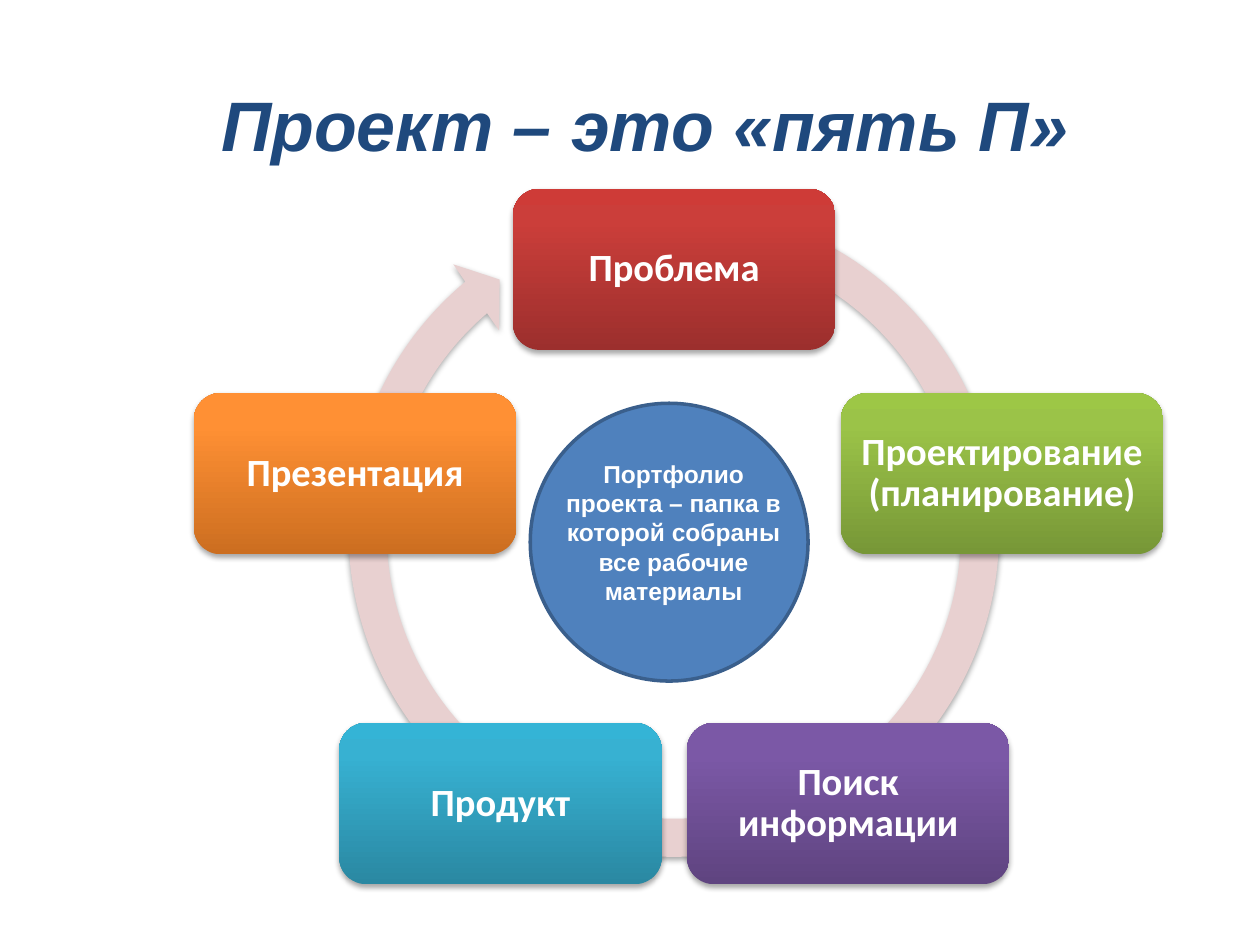
from lxml.etree import SubElement
from pptx import Presentation
from pptx.dml.color import RGBColor
from pptx.enum.shapes import MSO_SHAPE
from pptx.enum.text import MSO_ANCHOR, MSO_AUTO_SIZE, PP_ALIGN
from pptx.oxml import parse_xml
from pptx.oxml.ns import nsdecls, qn
from pptx.util import Cm, Pt

TITLE = "Проект – это «пять П»"
PORTFOLIO = "Портфолио проекта – папка в которой собраны все рабочие материалы"

# Label, centre of the box in cm, gradient colours from bottom to top
STAGES = [
    ("Проблема", (13.59, 5.43), ("9C2F2D", "CB3E3A", "CE3B37")),
    ("Проектирование (планирование)", (20.2, 9.55), ("779737", "9BC348", "9DC746")),
    ("Поиск информации", (17.1, 16.2), ("5F4480", "7B58A6", "7C57A8")),
    ("Продукт", (10.09, 16.2), ("2A88A2", "37B1D2", "34B4D6")),
    ("Презентация", (7.16, 9.55), ("CC6E20", "FF9034", "FF9136")),
]
STAGE_WIDTH, STAGE_HEIGHT = 6.5, 3.25

THEME = {
    "title": "1F497D", "ring": "E8D0D0", "white": "FFFFFF",
    "circle": "4F81BD", "circle_line": "3A5F8C", "shadow": "000000",
    "heading_font": "Arial", "stage_font": "Calibri",
    "title_size": 40, "stage_size": 22, "portfolio_size": 14,
}
GRADIENT_STOPS = (0, 80, 100)
RING_ADJUSTMENTS = (0.055, 3.307, 137.893, 173.778, 0.058)


def color(name):
    return RGBColor.from_string(THEME[name])


def write_text(shape, text, *, font, size, fill, italic=False, line_spacing=None):
    frame = shape.text_frame
    frame.word_wrap = True
    paragraph = frame.paragraphs[0]
    paragraph.alignment = PP_ALIGN.CENTER
    if line_spacing:
        paragraph.line_spacing = line_spacing
    run = paragraph.add_run()
    run.text = text
    run.font.name = THEME[font]
    run.font.size = Pt(THEME[size])
    run.font.color.rgb = color(fill)
    run.font.bold = True
    run.font.italic = italic
    return frame


def add_text_box(slide, box, text, **text_format):
    shape = slide.shapes.add_textbox(*map(Cm, box))
    frame = write_text(shape, text, **text_format)
    frame.auto_size = MSO_AUTO_SIZE.SHAPE_TO_FIT_TEXT


def add_soft_shadow(shape):
    shape.shadow.inherit = False
    effects = shape._element.spPr.find(qn("a:effectLst"))
    shadow = SubElement(effects, qn("a:outerShdw"), blurRad=str(Pt(3.1)),
                        dist=str(Pt(1.8)), dir="5400000", rotWithShape="0")
    shade = SubElement(shadow, qn("a:srgbClr"), val=THEME["shadow"])
    SubElement(shade, qn("a:alpha"), val="35000")


def set_gradient(shape, colors):
    """Fill the shape with a three-stop gradient running upwards."""
    stops = "".join(
        f'<a:gs pos="{position * 1000}"><a:srgbClr val="{value}"/></a:gs>'
        for position, value in zip(GRADIENT_STOPS, colors))
    gradient = parse_xml(
        f'<a:gradFill {nsdecls("a")} rotWithShape="1"><a:gsLst>{stops}</a:gsLst>'
        '<a:lin ang="16200000" scaled="0"/></a:gradFill>')
    shape._element.spPr.find(qn("a:prstGeom")).addnext(gradient)


def add_ring(group):
    ring = group.shapes.add_shape(MSO_SHAPE.CIRCULAR_ARROW, Cm(6.6), Cm(3.73), Cm(13.97), Cm(13.97))
    for index, value in enumerate(RING_ADJUSTMENTS):
        ring.adjustments[index] = value
    ring.fill.solid()
    ring.fill.fore_color.rgb = color("ring")
    ring.line.fill.background()
    add_soft_shadow(ring)


def add_stage(group, label, center, colors):
    left, top = center[0] - STAGE_WIDTH / 2, center[1] - STAGE_HEIGHT / 2
    stage = group.shapes.add_shape(
        MSO_SHAPE.ROUNDED_RECTANGLE, *map(Cm, (left, top, STAGE_WIDTH, STAGE_HEIGHT)))
    set_gradient(stage, colors)
    stage.line.fill.background()
    add_soft_shadow(stage)
    frame = write_text(stage, label, font="stage_font", size="stage_size",
                       fill="white", line_spacing=0.9)
    frame.vertical_anchor = MSO_ANCHOR.MIDDLE
    frame.margin_left = frame.margin_right = Cm(0.05)
    frame.margin_top = frame.margin_bottom = Cm(0.05)


def add_circle(slide):
    circle = slide.shapes.add_shape(MSO_SHAPE.OVAL, Cm(10.69), Cm(8.13), Cm(5.6), Cm(5.6))
    circle.shadow.inherit = False
    circle.fill.solid()
    circle.fill.fore_color.rgb = color("circle")
    circle.line.color.rgb = color("circle_line")
    circle.line.width = Pt(2)


def main():
    presentation = Presentation()
    presentation.slide_width, presentation.slide_height = Cm(25.4), Cm(19.05)
    slide = presentation.slides.add_slide(presentation.slide_layouts[6])

    add_text_box(slide, (2.5, 1.52, 21, 1.97), TITLE, font="heading_font",
                 size="title_size", fill="title", italic=True)
    cycle = slide.shapes.add_group_shape()
    add_ring(cycle)
    for label, center, colors in STAGES:
        add_stage(cycle, label, center, colors)
    add_circle(slide)
    add_text_box(slide, (10.88, 9.12, 5.4, 3.24), PORTFOLIO, font="heading_font",
                 size="portfolio_size", fill="white")
    presentation.save("out.pptx")


if __name__ == "__main__":
    main()
